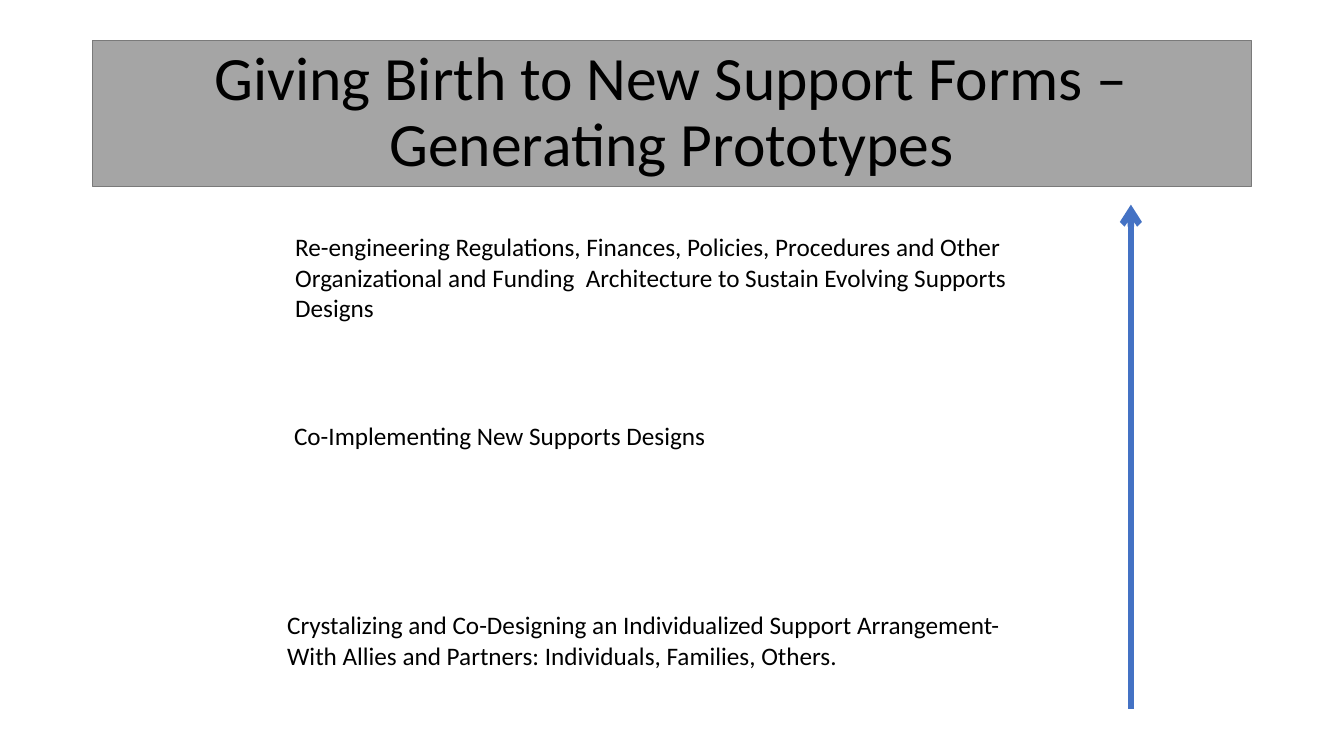
from lxml.etree import SubElement as sub
from pptx import Presentation
from pptx.dml.color import RGBColor as RGB
from pptx.enum.shapes import MSO_CONNECTOR as LINK, MSO_SHAPE as SHAPE
from pptx.enum.text import MSO_ANCHOR as ANCHOR, MSO_AUTO_SIZE as FIT, PP_ALIGN as ALIGN
from pptx.oxml.ns import qn
from pptx.util import Pt

BLACK = RGB(0x00, 0x00, 0x00)
GRAY = RGB(0xA5, 0xA5, 0xA5)
EDGE = RGB(0x7A, 0x7A, 0x7A)
BLUE = RGB(0x44, 0x72, 0xC4)


def write(shape, text, size=18, align=ALIGN.LEFT, space=1.0, wrap=False,
          anchor=ANCHOR.TOP, fit=FIT.SHAPE_TO_FIT_TEXT):
    frame = shape.text_frame
    frame.word_wrap = wrap
    frame.auto_size = fit
    frame.vertical_anchor = anchor
    frame.text = text
    for para in frame.paragraphs:
        para.alignment = align
        para.line_spacing = space
        para.font.size = Pt(size)
        para.font.name = "Calibri"
        para.font.color.rgb = BLACK


deck = Presentation()
deck.slide_width, deck.slide_height = Pt(960), Pt(540)
slide = deck.slides.add_slide(deck.slide_layouts[6])
shapes = slide.shapes

# Title banner
title = shapes.add_shape(SHAPE.RECTANGLE, Pt(66), Pt(28.75), Pt(828), Pt(104.4))
title.shadow.inherit = False
title.fill.solid()
title.fill.fore_color.rgb = GRAY
title.line.color.rgb = EDGE
title.line.width = Pt(1)
write(title, "Giving Birth to New Support Forms – Generating Prototypes",
      size=44, align=ALIGN.CENTER, space=0.9, wrap=True,
      anchor=ANCHOR.MIDDLE, fit=FIT.NONE)

# Upward arrow
arrow = shapes.add_connector(LINK.STRAIGHT, Pt(807.8), Pt(506.2), Pt(807.8), Pt(146.2))
arrow.line.color.rgb = BLUE
arrow.line.width = Pt(4.5)
sub(arrow.line._get_or_add_ln(), qn("a:tailEnd"), type="arrow")
sub(arrow._element.spPr, qn("a:effectLst"))

# Stages, from the bottom up
stages = [
    (198, 432, 534.2, 51,
     "Crystalizing and Co-Designing an Individualized Support Arrangement-\n"
     "With Allies and Partners: Individuals, Families, Others."),
    (203, 296.6, 311.8, 29, "Co-Implementing New Supports Designs"),
    (203.8, 162, 528.5, 72.7,
     "Re-engineering Regulations, Finances, Policies, Procedures and Other\n"
     "Organizational and Funding  Architecture to Sustain Evolving Supports\n"
     "Designs"),
]
for left, top, width, height, text in stages:
    box = shapes.add_textbox(Pt(left), Pt(top), Pt(width), Pt(height))
    write(box, text)

deck.save("out.pptx")
